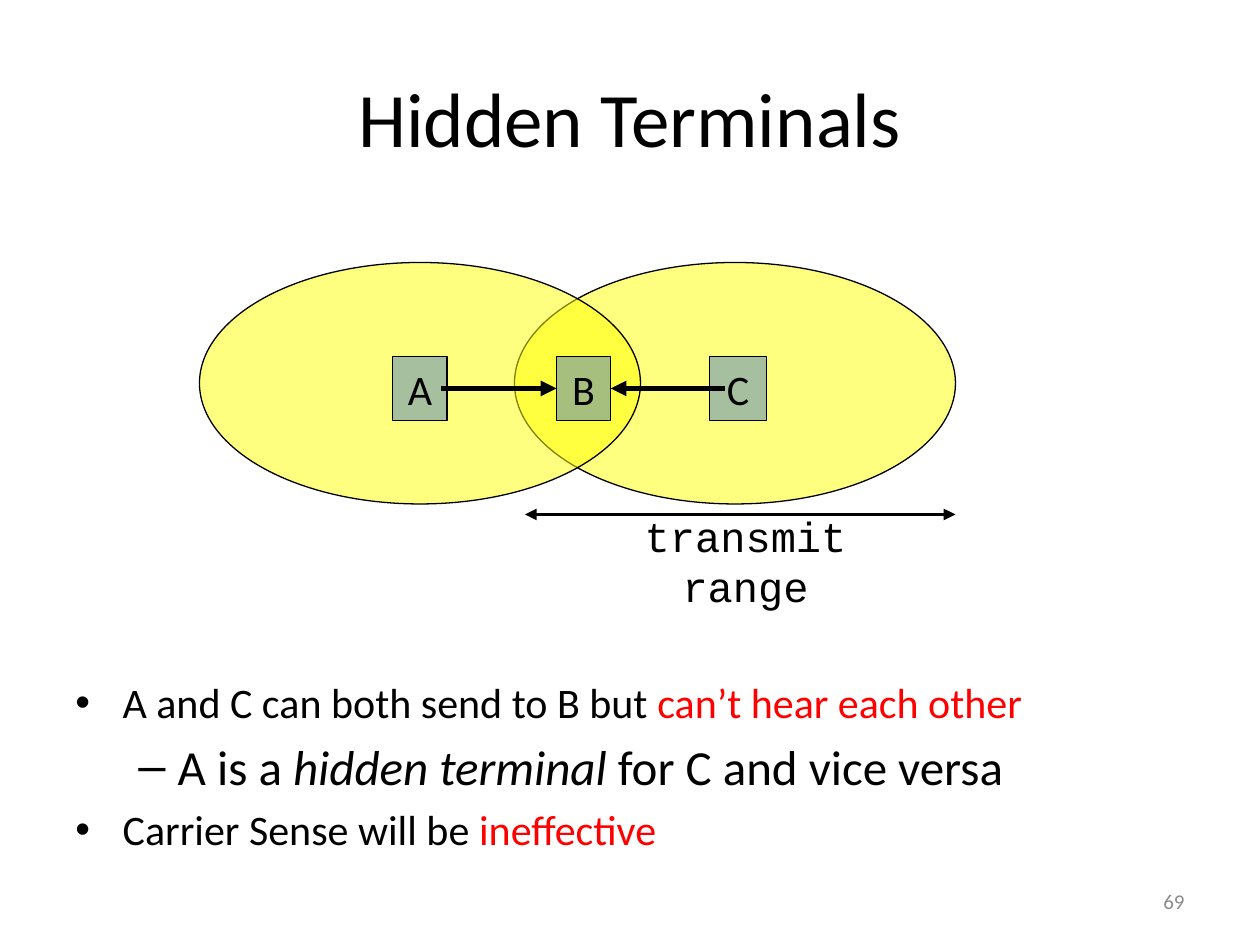
from dataclasses import dataclass

from lxml import etree
from pptx import Presentation, util as u
from pptx.dml.color import RGBColor
from pptx.enum import shapes, text
from pptx.oxml.ns import qn

BLACK = RGBColor(0, 0, 0)
RED = RGBColor(0xFF, 0, 0)
YELLOW = RGBColor(0xFF, 0xFF, 0)
BLUE = RGBColor(0x4F, 0x81, 0xBD)
GRAY = RGBColor(0x8C, 0x8C, 0x8C)
SANS, MONO = "Calibri", "Courier New"
KIND = shapes.MSO_SHAPE
ALIGN = text.PP_ALIGN
ANCHOR = text.MSO_ANCHOR


@dataclass
class Box:
    x: float
    y: float
    w: float
    h: float

    def pts(self) -> list:
        return [u.Pt(v) for v in (self.x, self.y, self.w, self.h)]


@dataclass
class Run:
    words: str
    size: float
    color: RGBColor = BLACK
    font: str = SANS
    slant: bool = False


@dataclass
class Point:
    runs: list[Run]
    level: int = 0
    gap: float = 0


@dataclass
class Arrow:
    start: tuple[float, float]
    end: tuple[float, float]
    width: float
    heads: tuple[str, ...]


def add_run(par, run: Run) -> None:
    item = par.add_run()
    item.text = run.words
    font = item.font
    font.name, font.size = run.font, u.Pt(run.size)
    font.italic = run.slant
    font.color.rgb = run.color


def add_text(slide, box: Box, run: Run, align, anchor=ANCHOR.MIDDLE) -> None:
    frame = slide.shapes.add_textbox(*box.pts()).text_frame
    frame.word_wrap = True
    frame.vertical_anchor = anchor
    par = frame.paragraphs[0]
    par.alignment = align
    add_run(par, run)


def add_form(slide, kind, box: Box, color: RGBColor):
    """Half-transparent shape with a thin black outline."""
    form = slide.shapes.add_shape(kind, *box.pts())
    form.shadow.inherit = False
    form.fill.solid()
    form.fill.fore_color.rgb = color
    tint = form._element.spPr.find(qn("a:solidFill"))[0]
    etree.SubElement(tint, qn("a:alpha"), val="50000")
    form.line.color.rgb = BLACK
    form.line.width = u.Pt(0.75)
    return form


def add_node(slide, name: str, box: Box):
    node = add_form(slide, KIND.RECTANGLE, box, BLUE)
    frame = node.text_frame
    frame.word_wrap = False
    frame.vertical_anchor = ANCHOR.MIDDLE
    par = frame.paragraphs[0]
    par.alignment = ALIGN.CENTER
    add_run(par, Run(name, 24))
    return node


def add_arrow(slide, arrow: Arrow):
    ends = [u.Pt(v) for v in (*arrow.start, *arrow.end)]
    line = slide.shapes.add_connector(shapes.MSO_CONNECTOR.STRAIGHT, *ends)
    line.line.color.rgb = BLACK
    line.line.width = u.Pt(arrow.width)
    props = line._element.spPr
    for head in arrow.heads:
        etree.SubElement(props.find(qn("a:ln")), qn(head), type="triangle")
    etree.SubElement(props, qn("a:effectLst"))
    return line


def add_list(slide, box: Box, points: list[Point]) -> None:
    frame = slide.shapes.add_textbox(*box.pts()).text_frame
    frame.word_wrap = True
    marks = [("•", 27, 27), ("–", 58.5, 22.5)]
    for i, point in enumerate(points):
        par = frame.add_paragraph() if i else frame.paragraphs[0]
        par.level = point.level
        par.space_before = u.Pt(point.gap)
        mark, left, hang = marks[point.level]
        props = par._p.get_or_add_pPr()
        props.set("marL", str(u.Pt(left)))
        props.set("indent", str(-u.Pt(hang)))
        etree.SubElement(props, qn("a:buFont"), typeface="Arial")
        etree.SubElement(props, qn("a:buChar"), char=mark)
        for run in point.runs:
            add_run(par, run)


def main() -> None:
    deck = Presentation()
    deck.slide_width, deck.slide_height = u.Pt(720), u.Pt(540)
    slide = deck.slides.add_slide(deck.slide_layouts[6])

    # Title
    add_text(slide, Box(36, 21.6, 648, 90), Run("Hidden Terminals", 44),
             ALIGN.CENTER)

    # Transmit ranges of C and A
    for x in (294, 114):
        add_form(slide, KIND.OVAL, Box(x, 150, 252, 138), YELLOW)

    # Terminals
    spots = [("A", 224.5, 31), ("B", 318, 31), ("C", 405.5, 32.5)]
    nodes = {name: add_node(slide, name, Box(x, 203.75, w, 36.5))
             for name, x, w in spots}

    # Signals from A and C into the sides of B
    for start, end, side in ((252, 318, 1), (414, 349, 3)):
        line = add_arrow(slide, Arrow((start, 222), (end, 222), 3,
                                      ("a:tailEnd",)))
        line.end_connect(nodes["B"], side)

    # Range marker
    add_arrow(slide, Arrow((300, 294), (546, 294), 2.25,
                           ("a:headEnd", "a:tailEnd")))
    add_text(slide, Box(342, 288, 168, 62),
             Run("transmit range", 24, font=MONO), ALIGN.CENTER, ANCHOR.TOP)

    # Findings
    add_list(slide, Box(36, 383, 648, 110), [
        Point([Run("A and C can both send to B but ", 24),
               Run("can’t hear each other", 24, RED)]),
        Point([Run("A is a ", 28), Run("hidden terminal", 28, slant=True),
               Run(" for C and vice versa", 28)], 1, 5.6),
        Point([Run("Carrier Sense will be ", 24),
               Run("ineffective", 24, RED)], 0, 4.8),
    ])

    # Page number
    add_text(slide, Box(516, 500.5, 168, 28.75), Run("69", 12, GRAY),
             ALIGN.RIGHT)

    deck.save("out.pptx")


if __name__ == "__main__":
    main()
